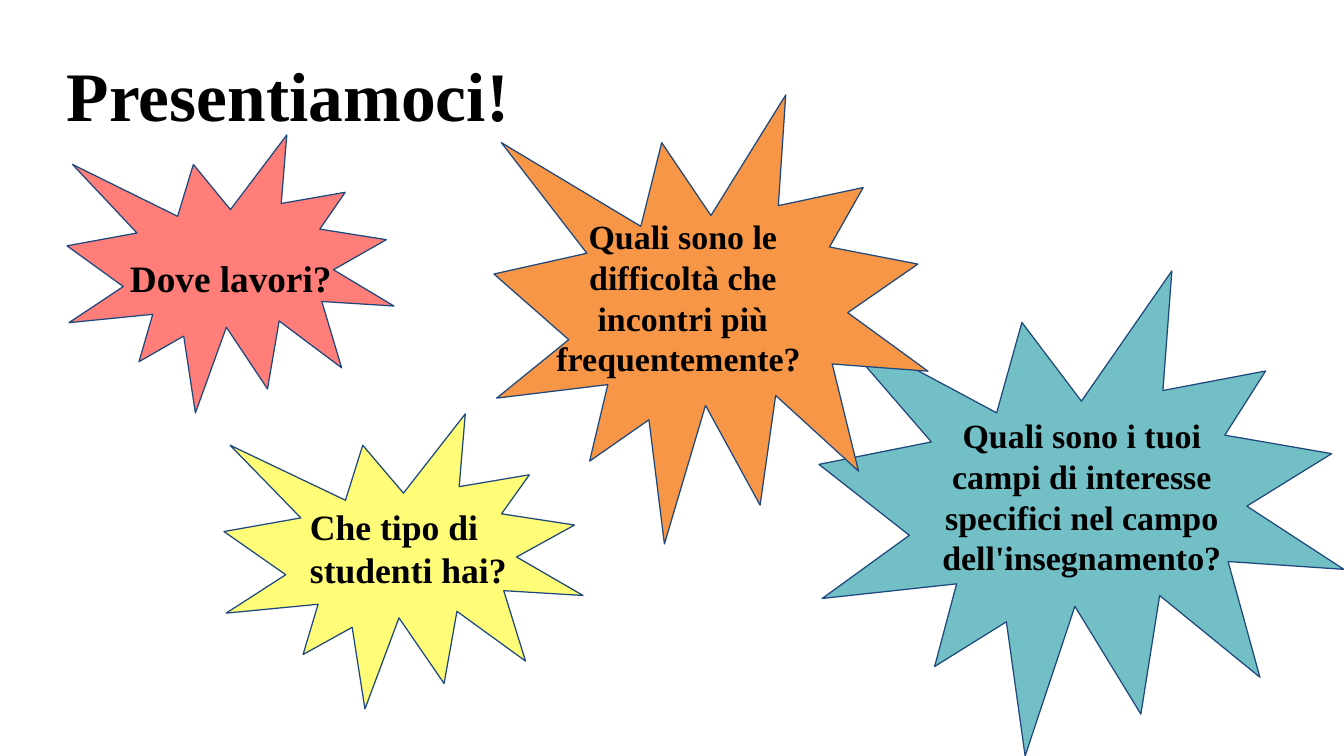
from dataclasses import dataclass

from pptx import Presentation, util as u
from pptx.dml.color import RGBColor
from pptx.enum import shapes, text


@dataclass(frozen=True)
class Theme:
    font: str = "Times New Roman"
    ink: str = "000000"
    outline: str = "1F497D"
    coral: str = "FF7E79"
    yellow: str = "FFFD78"
    teal: str = "72BFC5"
    orange: str = "F79646"
    title_size: int = 41
    large_size: int = 22
    medium_size: int = 21
    small_size: int = 20
    line_width: float = 0.75


THEME = Theme()
LEFT, CENTER = text.PP_ALIGN.LEFT, text.PP_ALIGN.CENTER
TOP, MIDDLE = text.MSO_ANCHOR.TOP, text.MSO_ANCHOR.MIDDLE
PX = u.Inches(1) / 122
PAGE_SIZE = (1344, 756)
INSET = 12

TITLE = ("Presentiamoci!", (67, 30, 508, 127))
BURSTS = [
    ((67, 135, 327, 278), THEME.coral, "Dove lavori?",
     (118, 243, 251, 70), THEME.large_size, LEFT),
    ((224, 414, 359, 295), THEME.yellow, "Che tipo di studenti hai?",
     (298, 493, 251, 111), THEME.medium_size, LEFT),
    ((819, 271, 525, 485), THEME.teal,
     "Quali sono i tuoi campi di interesse specifici nel campo dell'insegnamento?",
     (926, 403, 312, 189), THEME.small_size, CENTER),
    ((494, 95, 434, 449), THEME.orange,
     "Quali sono le difficoltà che incontri più frequentemente? ",
     (534, 204, 298, 189), THEME.small_size, CENTER),
]


def emu(lengths):
    return [u.Emu(round(length * PX)) for length in lengths]


def add_burst(page, place, color):
    burst = page.shapes.add_shape(shapes.MSO_SHAPE.EXPLOSION1, *emu(place))
    burst.shadow.inherit = False
    burst.fill.solid()
    burst.fill.fore_color.rgb = RGBColor.from_string(color)
    burst.line.color.rgb = RGBColor.from_string(THEME.outline)
    burst.line.width = u.Pt(THEME.line_width)


def add_text(page, words, place, size, align=LEFT, anchor=TOP, inset=INSET):
    frame = page.shapes.add_textbox(*emu(place)).text_frame
    frame.word_wrap = True
    frame.vertical_anchor = anchor
    margins = emu([inset] * 4)
    frame.margin_left, frame.margin_top, frame.margin_right, frame.margin_bottom = margins
    para = frame.paragraphs[0]
    para.text = words
    para.alignment = align
    para.font.name = THEME.font
    para.font.size = u.Pt(size)
    para.font.bold = True
    para.font.color.rgb = RGBColor.from_string(THEME.ink)


def main():
    deck = Presentation()
    deck.slide_width, deck.slide_height = emu(PAGE_SIZE)
    page = deck.slides.add_slide(deck.slide_layouts[6])
    add_text(page, *TITLE, THEME.title_size, anchor=MIDDLE, inset=0)
    for burst_place, color, question, text_place, size, align in BURSTS:
        add_burst(page, burst_place, color)
        add_text(page, question, text_place, size, align)
    deck.save("out.pptx")


if __name__ == "__main__":
    main()
